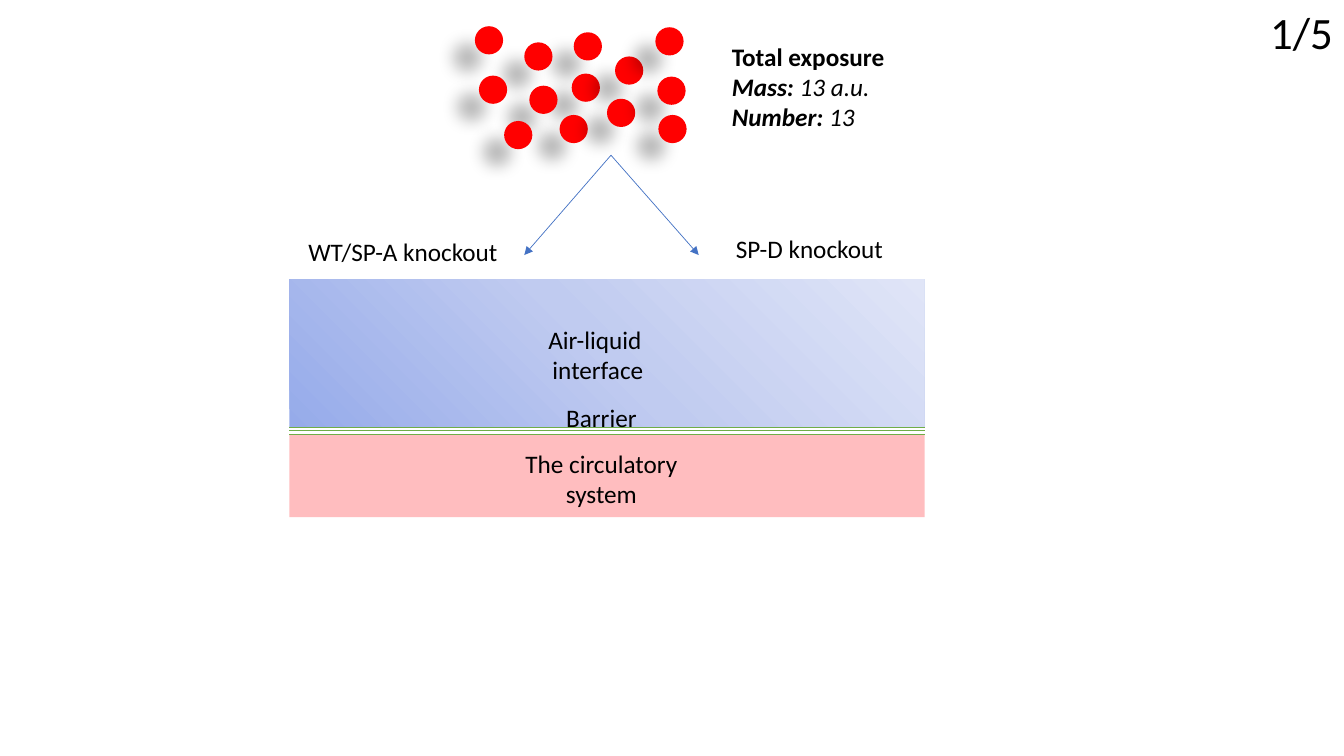
from copy import deepcopy
from lxml import etree
from pptx import Presentation
from pptx import util as u
from pptx.dml.color import RGBColor
from pptx.enum import shapes, text
from pptx.oxml import ns

# Content: a line break is \v, boxes are left, top, width, height in inches
HUES = {"text": "000000", "dot": "FF0000", "blood": "FFBDBF",
        "arrow": "4472C4", "wall": "70AD47"}
AIR = ["96ABEA", "C0CBF0", "E0E5F7"]
LEFT, RIGHT = 2.87, 9.17
LAYERS = {"air": (2.77, 1.47), "blood": (4.31, 0.82)}
WALLS = [4.27, 4.31, 4.24]
FORK = (6.06, 1.54)
TIPS = [(5.2, 2.53), (6.93, 2.53)]
SIDE = 0.28
DOTS = [(5.69, 0.32), (5.67, 0.73), (6.1, 0.56), (5.2, 0.42), (5.25, 0.85),
        (5.55, 1.14), (6.02, 0.98), (6.5, 0.27), (6.52, 0.76), (6.53, 1.14),
        (5, 1.2), (4.75, 0.75), (4.71, 0.26)]
LABELS = [
    ("Air-liquid \vinterface", (5.33, 3.17, 1.2, 0.71), 18, True),
    ("SP-D knockout", (7.2, 2.27, 1.68, 0.4), 18, False),
    ("The circulatory\vsystem", (5.1, 4.4, 1.73, 0.71), 18, True),
    ("Barrier", (5.51, 3.94, 0.91, 0.4), 18, True),
    ("WT/SP-A knockout", (2.96, 2.3, 2.1, 0.4), 18, False),
    ("1/5", (12.5, 0, 0.83, 0.64), 32, False),
]
TOTAL = "Total exposure"
FACTS = [("Mass:", " 13 a.u."), ("Number: ", "13")]
TOTAL_BOX = (7.16, 0.36, 1.73, 1.01)

deck = Presentation()
deck.slide_width, deck.slide_height = u.Inches(13.33), u.Inches(7.5)
slide = deck.slides.add_slide(deck.slide_layouts[6])
parts = slide.shapes


def rgb(name):
    return RGBColor.from_string(HUES[name])


def sub(node, tag, **attrs):
    return etree.SubElement(node, ns.qn("a:" + tag), attrs)


def add_form(kind, box, hue=None):
    form = parts.add_shape(kind, *map(u.Inches, box))
    form.shadow.inherit = False
    form.line.fill.background()
    if hue:
        form.fill.solid()
        form.fill.fore_color.rgb = rgb(hue)
    return form


def add_line(start, end, hue, width):
    line = parts.add_connector(shapes.MSO_CONNECTOR.STRAIGHT,
                               *map(u.Inches, start + end))
    line.line.color.rgb = rgb(hue)
    line.line.width = u.Pt(width)
    sub(line._element.spPr, "effectLst")
    return line


def add_box(box):
    frame = parts.add_textbox(*map(u.Inches, box)).text_frame
    frame.word_wrap = False
    frame.auto_size = text.MSO_AUTO_SIZE.SHAPE_TO_FIT_TEXT
    return frame


def style(para, size):
    font = para.font
    font.name, font.size = "Calibri", u.Pt(size)
    font.color.rgb = rgb("text")
    return font


# Layers: circulatory system, then the air-liquid gradient
def add_layer(name, hue=None):
    top, height = LAYERS[name]
    return add_form(shapes.MSO_SHAPE.RECTANGLE,
                    (LEFT, top, RIGHT - LEFT, height), hue)


add_layer("blood", "blood")
fill = add_layer("air").fill
fill.gradient()
fill.gradient_angle = 45
first = fill.gradient_stops[0]._gs
first.addnext(deepcopy(first))
for i, (stop, hue) in enumerate(zip(fill.gradient_stops, AIR)):
    stop.color.rgb = RGBColor.from_string(hue)
    stop.position = i / 2

# Forked arrows and barrier lines
for tip in TIPS:
    arrow = add_line(FORK, tip, "arrow", 0.5)
    sub(arrow.line._get_or_add_ln(), "tailEnd", type="triangle")
for y in WALLS:
    add_line((LEFT, y), (RIGHT, y), "wall", 1)

# Labels
for words, box, size, middle in LABELS:
    para = add_box(box).paragraphs[0]
    para.text = words
    style(para, size)
    if middle:
        para.alignment = text.PP_ALIGN.CENTER

# Exposure summary
frame = add_box(TOTAL_BOX)
head = frame.paragraphs[0]
head.text = TOTAL
style(head, 18).bold = True
para = frame.add_paragraph()
style(para, 18).italic = True
for i, (key, value) in enumerate(FACTS):
    if i:
        para.add_line_break()
    for words, bold in ((key, True), (value, False)):
        run = para.add_run()
        run.text, run.font.bold = words, bold

# Particles with soft shadows
for x, y in DOTS:
    dot = add_form(shapes.MSO_SHAPE.OVAL, (x, y, SIDE, SIDE), "dot")
    glow = sub(dot._element.spPr.find(ns.qn("a:effectLst")), "outerShdw",
               blurRad=str(u.Pt(11.8)), dist=str(u.Pt(19.7)),
               dir=str(141 * 60000), algn="ctr", rotWithShape="0")
    sub(sub(glow, "srgbClr", val="000000"), "alpha", val="28000")

deck.save("out.pptx")
